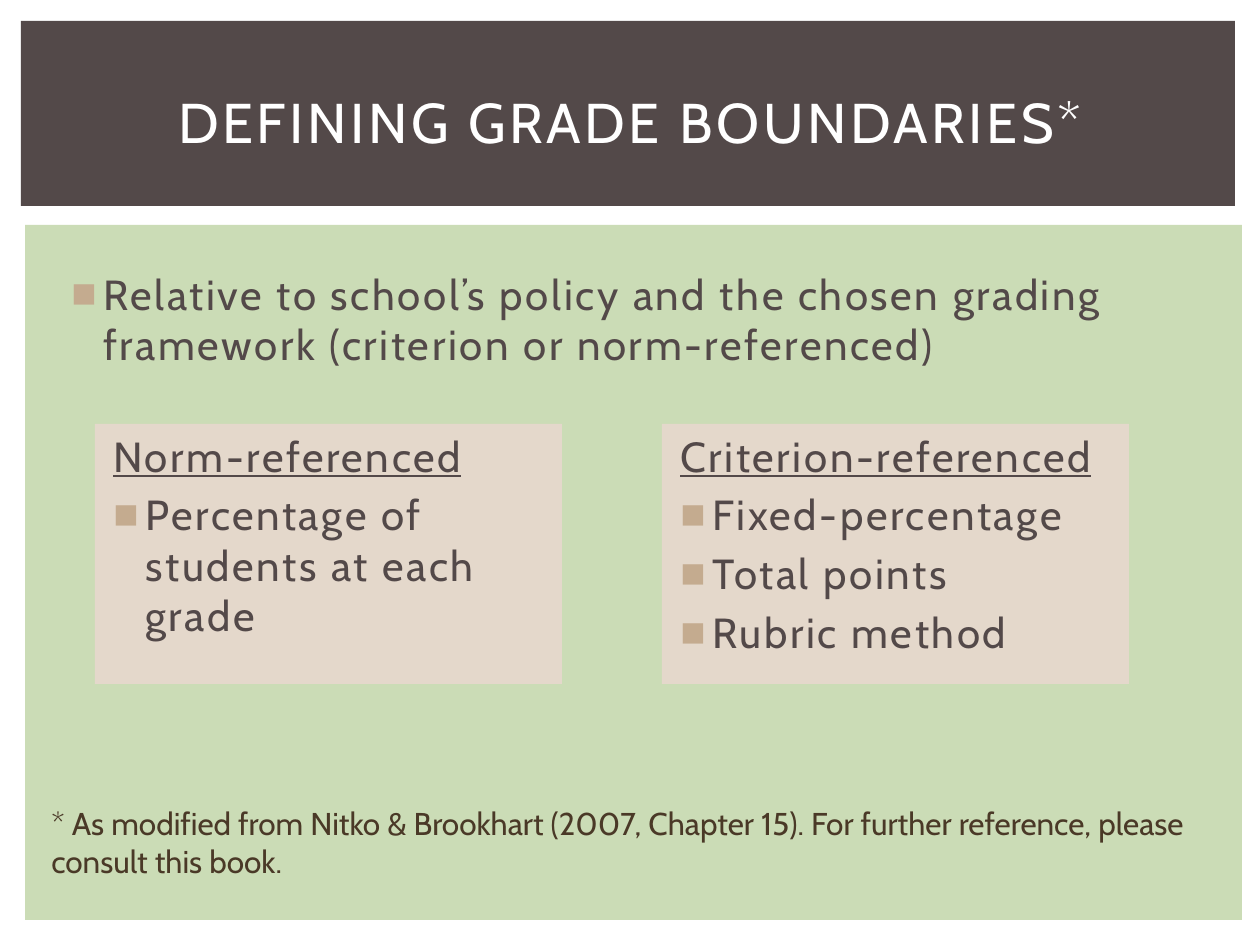
from dataclasses import dataclass

from lxml import etree
from pptx import Presentation
from pptx.dml.color import RGBColor
from pptx.enum.shapes import MSO_SHAPE
from pptx.enum.text import MSO_ANCHOR, PP_ALIGN
from pptx.oxml.ns import qn
from pptx.util import Emu, Pt

RECTANGLE = MSO_SHAPE.RECTANGLE
LEFT, CENTER = PP_ALIGN.LEFT, PP_ALIGN.CENTER
TOP, MIDDLE = MSO_ANCHOR.TOP, MSO_ANCHOR.MIDDLE
EMU_PER_PX = 914400 / 126


@dataclass(frozen=True)
class Theme:
    font: str = "Cabin"
    bullet_font: str = "Arial"
    dark: str = "534949"
    green: str = "CBDCB6"
    beige: str = "E4D8CB"
    bullet: str = "C4AB8F"
    brown: str = "4A3927"
    white: str = "FFFFFF"
    title_size: int = 32
    body_size: int = 24
    note_size: int = 18


THEME = Theme()


def px(*lengths):
    return [Emu(round(length * EMU_PER_PX)) for length in lengths]


def write(frame, text, *, size=THEME.body_size, color=THEME.dark, spacing=150,
          align=LEFT, anchor=TOP, indent=0, hanging=0, bullet=False,
          underline=False, first=True):
    frame.word_wrap = True
    frame.vertical_anchor = anchor
    paragraph = frame.paragraphs[0] if first else frame.add_paragraph()
    paragraph.alignment = align
    paragraph.line_spacing = 1.0
    paragraph.space_before = Pt(0 if first else size * 0.2)
    margin, hang = px(indent, hanging)
    properties = paragraph._p.get_or_add_pPr()
    properties.set("marL", str(margin))
    properties.set("indent", str(-hang))
    if bullet:
        bullet_color = etree.SubElement(properties, qn("a:buClr"))
        etree.SubElement(bullet_color, qn("a:srgbClr"), val=THEME.bullet)
        etree.SubElement(properties, qn("a:buFont"), typeface=THEME.bullet_font)
        etree.SubElement(properties, qn("a:buChar"), char="■")
    else:
        etree.SubElement(properties, qn("a:buNone"))
    run = paragraph.add_run()
    run.text = text
    run.font.name = THEME.font
    run.font.size = Pt(size)
    run.font.underline = underline
    run.font.color.rgb = RGBColor.from_string(color)
    run._r.get_or_add_rPr().set("spc", str(spacing))


presentation = Presentation()
presentation.slide_width, presentation.slide_height = px(1260, 945)
slide = presentation.slides.add_slide(presentation.slide_layouts[5])
shapes = slide.shapes

panels = []
for bounds, color in [
    ((25, 225, 1217, 695), THEME.green),
    ((21, 21, 1214, 185), THEME.dark),
    ((662, 424, 467, 260), THEME.beige),
    ((95, 424, 467, 260), THEME.beige),
]:
    panel = shapes.add_shape(RECTANGLE, *px(*bounds))
    panel.shadow.inherit = False
    panel.fill.solid()
    panel.fill.fore_color.rgb = RGBColor.from_string(color)
    panel.line.fill.background()
    panels.append(panel)

title = shapes.title
title.left, title.top, title.width, title.height = px(53, 49, 1155, 145)
write(title.text_frame, "DEFINING GRADE BOUNDARIES*", size=THEME.title_size,
      color=THEME.white, spacing=200, align=CENTER, anchor=MIDDLE)
shapes._spTree.append(title._element)

policy = shapes.add_textbox(*px(53, 262, 1158, 126))
write(policy.text_frame,
      "Relative to school’s policy and the chosen grading framework (criterion or norm-referenced)",
      indent=38, hanging=32, bullet=True)

methods = [
    ("Criterion-referenced", ["Fixed-percentage", "Total points", "Rubric method"]),
    ("Norm-referenced", ["Percentage of students at each grade"]),
]
for panel, (heading, items) in zip(panels[2:], methods):
    write(panel.text_frame, heading, indent=6, underline=True)
    for item in items:
        write(panel.text_frame, item, indent=38, hanging=32, bullet=True, first=False)

citation = shapes.add_textbox(*px(39, 798, 1187, 89))
write(citation.text_frame,
      "* As modified from Nitko & Brookhart (2007, Chapter 15). For further reference, please consult this book.",
      size=THEME.note_size, color=THEME.brown, spacing=0)

presentation.save("out.pptx")
